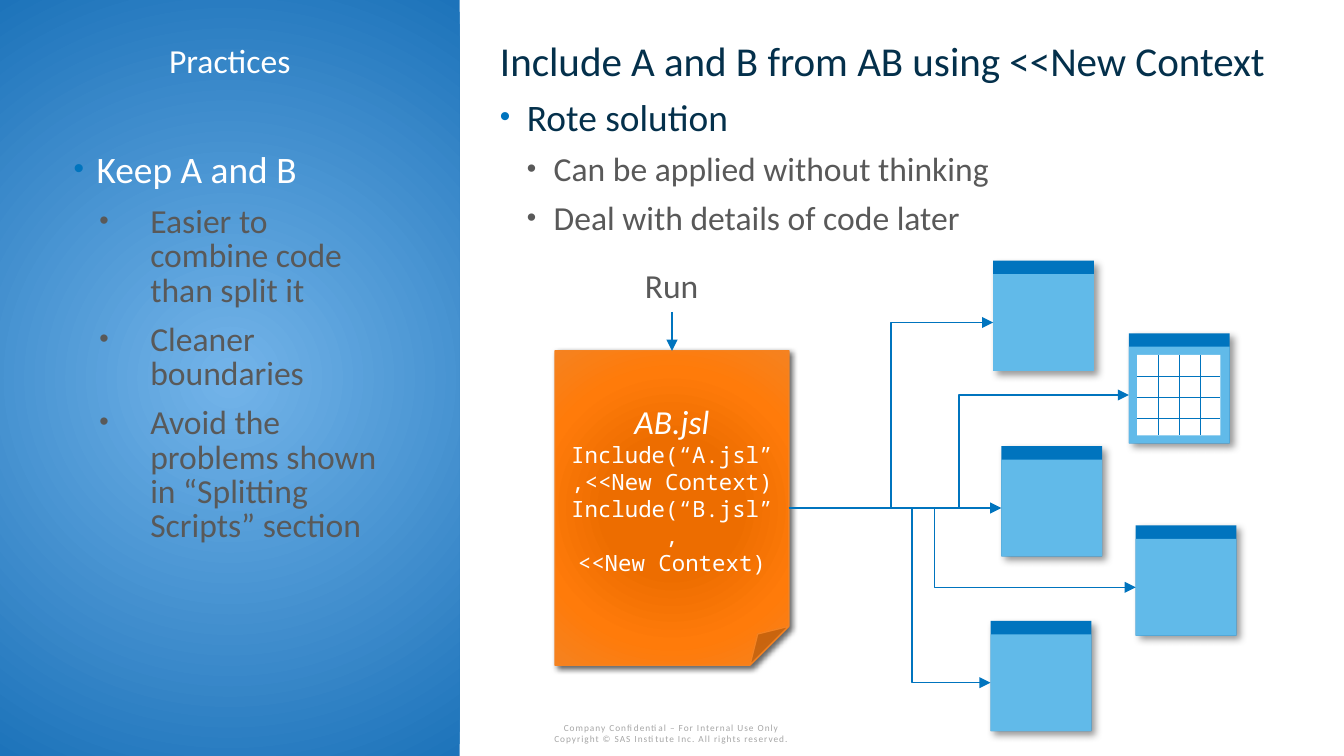
"""Build the slide on including scripts A and B from AB with a new context."""
from lxml import etree
from pptx import Presentation, util as u
from pptx.dml.color import RGBColor
from pptx.enum import dml, shapes, text
from pptx.oxml import parse_xml
from pptx.oxml.ns import nsdecls, qn

WIDTH, PANEL = 10, 3.42
HEIGHT = WIDTH * 9 / 16
BLUE, SKY, NAVY, GREY, WHITE = "0074BE", "61BAE9", "04304B", "595959", "FFFFFF"
ORANGE = "F58220"
SANS, MONO = "Calibri", "Noto Sans Mono"
LEFT, CENTER = text.PP_ALIGN.LEFT, text.PP_ALIGN.CENTER

TITLE = "Practices"
HEADING = "Include A and B from AB using <<New Context"
FOOTER = ["Company Confidential – For Internal Use Only",
          "Copyright © SAS Institute Inc. All rights reserved."]
REASONS = ["Keep A and B", "Easier to combine code than split it", "Cleaner boundaries",
           "Avoid the problems shown in “Splitting Scripts” section"]
BENEFITS = ["Rote solution", "Can be applied without thinking",
            "Deal with details of code later"]
SCRIPT = ["AB.jsl", "Include(“A.jsl”,<<New Context)", "Include(“B.jsl”,", "<<New Context)"]
SCRIPT_AT = (4.13, 2.61, 1.74, 2.34)
WINDOW_W, WINDOW_H, BAR = 0.75, 0.82, 0.1
# left, top, share of the way at which the arrow turns, holds a table
WINDOWS = [(7.39, 1.94, 0.5, False), (8.4, 2.48, 0.5, True), (7.45, 3.32, None, False),
           (8.45, 3.91, 0.42, False), (7.37, 4.62, 0.61, False)]


def rgb(value):
    return RGBColor.from_string(value)


def inches(*values):
    return [u.Inches(value) for value in values]


def style(paragraph, size, color, align=LEFT, face=SANS, italic=False):
    paragraph.alignment = align
    font = paragraph.font
    font.size, font.name, font.italic = u.Pt(size), face, italic
    font.color.rgb = rgb(color)


def fill_lines(frame, lines):
    frame.text = lines[0]
    for line in lines[1:]:
        frame.add_paragraph().text = line
    return frame.paragraphs


def text_box(at, lines, wrap=True, anchor=text.MSO_ANCHOR.TOP):
    box = slide.shapes.add_textbox(*inches(*at))
    box.text_frame.word_wrap = wrap
    box.text_frame.vertical_anchor = anchor
    return box, fill_lines(box.text_frame, lines)


def bullet_list(at, lines, indents, top_color):
    box, paragraphs = text_box(at, lines)
    for row, paragraph in enumerate(paragraphs):
        level = min(row, 1)
        color = GREY if level else top_color
        margin, hang = indents[level]
        paragraph.level = level
        paragraph.line_spacing = 0.85
        paragraph.space_before = u.Pt(8 if row else 0)
        props = paragraph._p.get_or_add_pPr()
        props.set("marL", str(u.Inches(margin)))
        props.set("indent", str(u.Inches(-hang)))
        dot = etree.SubElement(props, qn("a:buClr"))
        etree.SubElement(dot, qn("a:srgbClr"), val=GREY if level else BLUE)
        etree.SubElement(props, qn("a:buSzPct"), val="80000")
        etree.SubElement(props, qn("a:buFont"), typeface="Arial")
        etree.SubElement(props, qn("a:buChar"), char="•")
        style(paragraph, 18 if level else 20, color)
    return box


def block(parent, kind, at, color=None):
    shape = parent.add_shape(kind, *inches(*at))
    shape.shadow.inherit = False
    shape.line.fill.background()
    if color:
        shape.fill.solid()
        shape.fill.fore_color.rgb = rgb(color)
    return shape


def radial(shape, stops, focus):
    marks = "".join(f'<a:gs pos="{pos}000"><a:srgbClr val="{color}"/></a:gs>'
                    for pos, color in stops)
    edges = " ".join(f'{side}="{focus}000"' for side in "ltrb")
    shape._element.spPr.insert(2, parse_xml(
        f'<a:gradFill {nsdecls("a")} rotWithShape="1"><a:gsLst>{marks}</a:gsLst>'
        f'<a:path path="circle"><a:fillToRect {edges}/></a:path></a:gradFill>'))


def cast_shadow(shape, alpha, blur, distance):
    shape._element.spPr.find(qn("a:effectLst")).append(parse_xml(
        f'<a:outerShdw {nsdecls("a")} blurRad="{u.Pt(blur)}" dist="{u.Pt(distance)}" '
        f'dir="2700000" algn="tl" rotWithShape="0"><a:srgbClr val="000000">'
        f'<a:alpha val="{alpha}000"/></a:srgbClr></a:outerShdw>'))


def arrow(start, end, turn=None):
    kind = shapes.MSO_CONNECTOR.ELBOW if turn else shapes.MSO_CONNECTOR.STRAIGHT
    line = slide.shapes.add_connector(kind, *inches(*start, *end))
    line.line.color.rgb = rgb(BLUE)
    line.line.width = u.Pt(0.75)
    etree.SubElement(line.line._get_or_add_ln(), qn("a:tailEnd"), type="triangle")
    props = line._element.spPr
    etree.SubElement(props, qn("a:effectLst"))
    if turn:
        guides = props.find(qn("a:prstGeom")).get_or_add_avLst()
        etree.SubElement(guides, qn("a:gd"), name="adj1", fmla=f"val {round(turn * 100000)}")
    return line


def window(left, top, has_table):
    group = slide.shapes.add_group_shape().shapes
    rect = shapes.MSO_SHAPE.RECTANGLE
    cast_shadow(block(group, rect, (left, top, WINDOW_W, WINDOW_H), BLUE), 40, 4, 3)
    body = block(group, rect, (left, top + BAR, WINDOW_W, WINDOW_H - BAR), SKY)
    if has_table:
        table = block(group, rect, (left + 0.06, top + BAR + 0.06, 0.62, 0.6))
        table.fill.patterned()
        table.fill.pattern = dml.MSO_PATTERN.DOTTED_GRID
        table.fill.fore_color.rgb = rgb(BLUE)
        table.fill.back_color.rgb = rgb(WHITE)
    return body


deck = Presentation()
deck.slide_width, deck.slide_height = inches(WIDTH, HEIGHT)
slide = deck.slides.add_slide(deck.slide_layouts[5])

panel = block(slide.shapes, shapes.MSO_SHAPE.RECTANGLE, (0, 0, PANEL, HEIGHT))
radial(panel, [(0, "73B4E9"), (100, "1D73BA")], 50)
slide.shapes._spTree.insert(2, panel._element)

title = slide.shapes.title
title.left, title.top, title.width, title.height = inches(0, 0.25, PANEL, 0.4)
title.text_frame.text = TITLE
title.text_frame.vertical_anchor = text.MSO_ANCHOR.TOP
style(title.text_frame.paragraphs[0], 18, WHITE, CENTER)

_, footer = text_box((3.62, 5.32, 2.75, 0.27), FOOTER, anchor=text.MSO_ANCHOR.BOTTOM)
for paragraph in footer:
    style(paragraph, 5, "A6A6A6", CENTER)
    paragraph.runs[0]._r.get_or_add_rPr().set("spc", "50")

heading, (heading_line,) = text_box((PANEL, 0.21, WIDTH - PANEL, 0.47), [HEADING],
                                    anchor=text.MSO_ANCHOR.MIDDLE)
style(heading_line, 22, NAVY)
reasons = bullet_list((0.45, 1.09, 2.52, 3.04), REASONS, [(0.17, 0.17), (0.57, 0.38)], WHITE)
benefits = bullet_list((PANEL, 0.7, WIDTH - PANEL, 1.3), BENEFITS,
                       [(0.2, 0.2), (0.4, 0.2)], NAVY)
for box, right in ((heading, 0.3), (benefits, 0.5)):
    box.text_frame.margin_left, box.text_frame.margin_right = inches(0.3, right)

script = block(slide.shapes, shapes.MSO_SHAPE.FOLDED_CORNER, SCRIPT_AT)
script.line.color.rgb = rgb(ORANGE)
script.line.width = u.Pt(0.75)
radial(script, [(0, "ED6D00"), (34, "ED6D00"), (70, "FF7B0A"), (100, ORANGE)], 100)
cast_shadow(script, 60, 3, 2)
script.text_frame.vertical_anchor = text.MSO_ANCHOR.MIDDLE
name, *code = fill_lines(script.text_frame, SCRIPT)
style(name, 18, WHITE, CENTER, italic=True)
for line in code:
    style(line, 12, WHITE, CENTER, MONO)

x, y, w, h = SCRIPT_AT
run, (run_line,) = text_box((4.7, 1.92, 0.6, 0.4), ["Run"], wrap=False)
style(run_line, 18, GREY)
start = arrow((x + w / 2, 2.33), (x + w / 2, y))
start.begin_connect(run, 2)
start.end_connect(script, 0)

bodies = [window(left, top, has_table) for left, top, _, has_table in WINDOWS]
for (left, top, turn, _), body in zip(WINDOWS, bodies):
    link = arrow((x + w, y + h / 2), (left, top + (WINDOW_H + BAR) / 2), turn)
    if turn is None:
        link.begin_connect(script, 3)
        link.end_connect(body, 1)

deck.save("out.pptx")
